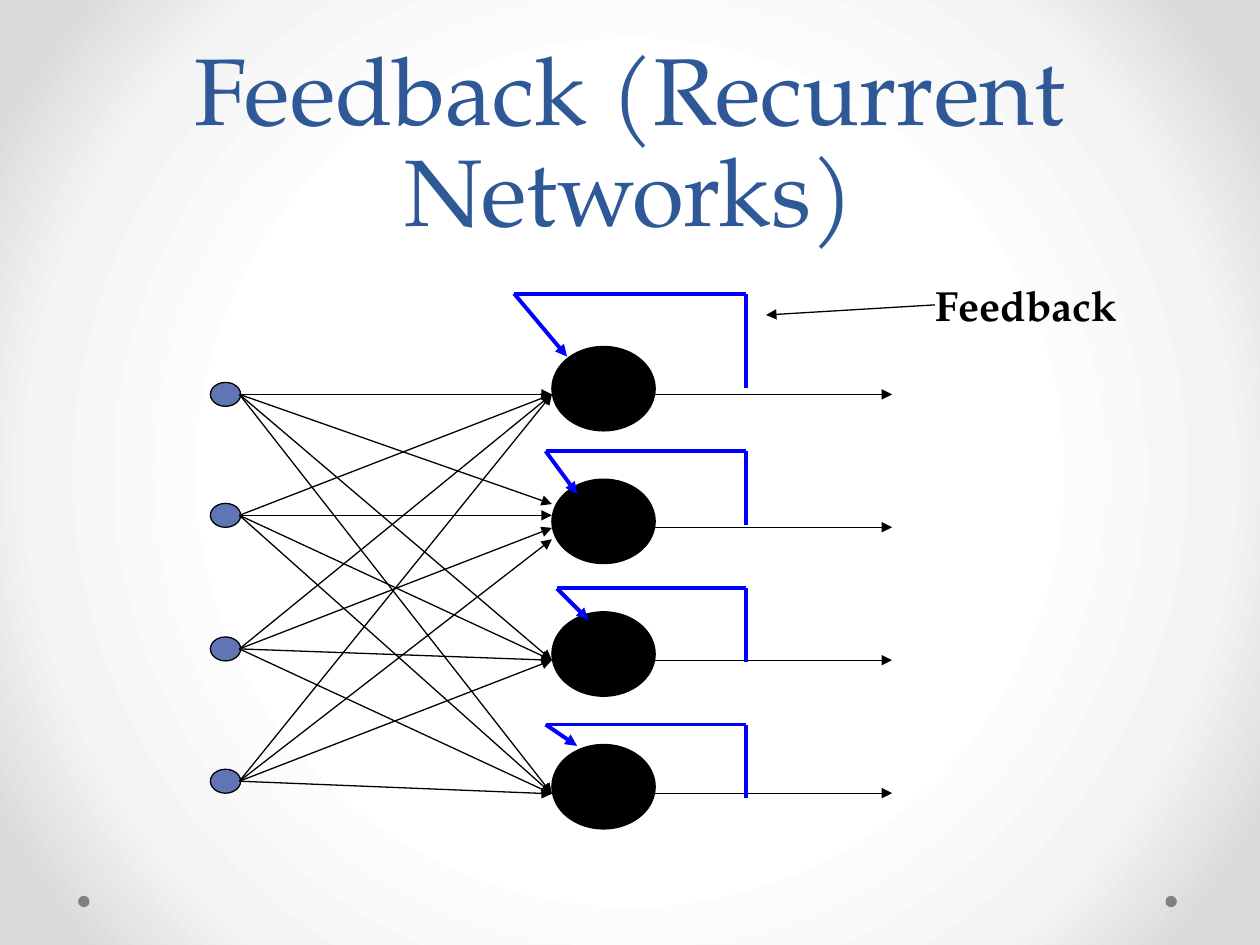
from pptx import Presentation
from pptx.dml.color import RGBColor
from pptx.enum.shapes import MSO_CONNECTOR, MSO_SHAPE
from pptx.enum.text import MSO_ANCHOR, PP_ALIGN
from pptx.oxml import parse_xml
from pptx.oxml.ns import nsdecls, qn
from pptx.util import Inches, Pt

FONT = "TeX Gyre Pagella"
TITLE = "Feedback (Recurrent Networks)"
LABEL = "Feedback"
BLACK, BLUE, INPUT_FILL, TITLE_COLOR, GREY = "000000", "0000FF", "6076B4", "2F5897", "808080"
BACKGROUND_STOPS = [(50, "FFFFFF"), (76, "F4F4F4"), (92, "DADADA")]

ROWS = 4
NEURON_X, NEURON_W, NEURON_H = 4.38, 0.82, 0.67
NEURON_TOPS = [2.75 + 1.053 * i for i in range(ROWS)]
INPUT_X, INPUT_W, INPUT_H = 1.67, 0.24, 0.19
INPUT_YS = [3.13, 4.09, 5.15, 6.2]
INPUT_RIGHT = 1.9
OUTPUT_YS = [3.13 + 1.055 * i for i in range(ROWS)]
OUTPUT_END = 7.08
# Where the links into each neuron end, one height per input
LINK_ENDS = [[3.13] * 4, [4, 4.09, 4.19, 4.28], [5.24] * 4, [6.3] * 4]
LOOP_X = 5.92
# Feedback loops: bottom of the riser, top left corner, arrow tip
LOOPS = [
    (3.08, (4.08, 2.33), (4.5, 2.83)),
    (4.17, (4.33, 3.58), (4.58, 3.92)),
    (5.25, (4.42, 4.67), (4.67, 4.92)),
    (6.33, (4.33, 5.75), (4.58, 5.92)),
]


def rgb(color):
    return RGBColor.from_string(color)


def add_background(s):
    """Fill the slide with a gradient that spreads from its centre."""
    s.background.fill.gradient()
    grad = s.element.find(".//" + qn("a:gradFill"))
    stops = "".join(f'<a:gs pos="{pos * 1000}"><a:srgbClr val="{color}"/></a:gs>'
                    for pos, color in BACKGROUND_STOPS)
    grad.getparent().replace(grad, parse_xml(
        f'<a:gradFill {nsdecls("a")} rotWithShape="1"><a:gsLst>{stops}</a:gsLst>'
        '<a:path path="circle"><a:fillToRect l="50000" t="50000" r="50000" b="50000"/>'
        '</a:path></a:gradFill>'))


def add_ellipse(s, x, y, w, h, fill, line=None):
    sp = s.shapes.add_shape(MSO_SHAPE.OVAL, Inches(x), Inches(y), Inches(w), Inches(h))
    sp.shadow.inherit = False
    sp.fill.solid()
    sp.fill.fore_color.rgb = rgb(fill)
    if line:
        sp.line.color.rgb = rgb(line)
        sp.line.width = Pt(0.75)
    else:
        sp.line.fill.background()


def add_line(s, start, end, color=BLACK, width=0.75, arrow=True):
    line = s.shapes.add_connector(MSO_CONNECTOR.STRAIGHT, *map(Inches, start + end))
    line.line.color.rgb = rgb(color)
    line.line.width = Pt(width)
    if arrow:
        line.line._get_or_add_ln().append(
            parse_xml(f'<a:tailEnd {nsdecls("a")} type="triangle"/>'))
    line._element.spPr.append(parse_xml(f'<a:effectLst {nsdecls("a")}/>'))


def add_text(s, x, y, w, h, text, size, color, bold=False):
    tf = s.shapes.add_textbox(Inches(x), Inches(y), Inches(w), Inches(h)).text_frame
    tf.word_wrap = True
    tf.text = text
    font = tf.paragraphs[0].runs[0].font
    font.name, font.size, font.bold = FONT, Pt(size), bold
    font.color.rgb = rgb(color)
    return tf


def main():
    prs = Presentation()
    prs.slide_width, prs.slide_height = Inches(10), Inches(7.5)
    s = prs.slides.add_slide(prs.slide_layouts[6])
    add_background(s)
    for x in (9.25, 0.62):
        add_ellipse(s, x, 7.11, 0.09, 0.09, GREY)

    tf = add_text(s, 0.5, 0.25, 9, 1.75, TITLE, 54, TITLE_COLOR)
    tf.vertical_anchor = MSO_ANCHOR.BOTTOM
    tf.paragraphs[0].alignment = PP_ALIGN.CENTER
    tf.paragraphs[0].line_spacing = Pt(58)

    for top in NEURON_TOPS:
        add_ellipse(s, NEURON_X, top, NEURON_W, NEURON_H, BLACK, BLACK)
    for y in INPUT_YS:
        add_ellipse(s, INPUT_X, y - INPUT_H / 2, INPUT_W, INPUT_H, INPUT_FILL, BLACK)

    for i, y in enumerate(INPUT_YS):
        for ends in LINK_ENDS:
            add_line(s, (INPUT_RIGHT, y), (NEURON_X, ends[i]))
    for y in OUTPUT_YS:
        add_line(s, (NEURON_X + NEURON_W, y), (OUTPUT_END, y))

    for bottom, corner, tip in LOOPS:
        points = [(LOOP_X, bottom), (LOOP_X, corner[1]), corner, tip]
        for start, end in zip(points, points[1:]):
            add_line(s, start, end, BLUE, 2.25, arrow=end == tip)

    add_text(s, 7.33, 2.17, 1.75, 0.5, LABEL, 24, BLACK, bold=True)
    add_line(s, (7.42, 2.42), (6.08, 2.5))
    prs.save("out.pptx")


if __name__ == "__main__":
    main()
